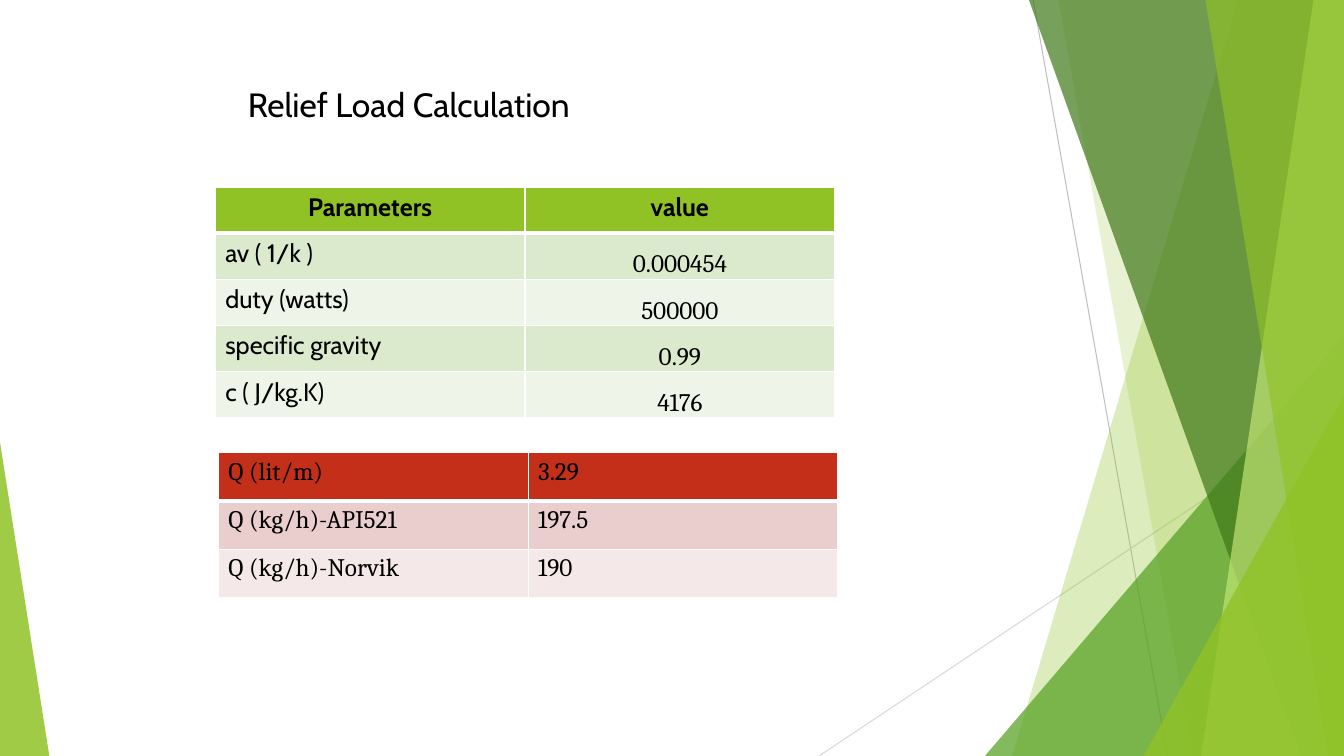
from lxml.etree import SubElement as Sub
from pptx import Presentation
from pptx.dml.color import RGBColor as RGB
from pptx.enum.shapes import MSO_CONNECTOR as Conn, MSO_SHAPE as Kind
from pptx.enum.text import MSO_ANCHOR as Anchor, PP_ALIGN as Align
from pptx.oxml.ns import qn
from pptx.util import Pt

PX = 9525
WIDE, HIGH = 1280, 720
BLACK = RGB(0x00, 0x00, 0x00)
WHITE = RGB(0xFF, 0xFF, 0xFF)
SILVER = RGB(0xBF, 0xBF, 0xBF)
PALE = RGB(0xD9, 0xD9, 0xD9)
LIME = RGB(0x90, 0xC2, 0x26)
LEAF = RGB(0x54, 0xA0, 0x21)
FOREST = RGB(0x3F, 0x78, 0x19)
SPRING = RGB(0xC0, 0xE4, 0x74)
GREENS = LIME, RGB(0xDB, 0xE9, 0xCD), RGB(0xEE, 0xF4, 0xE8)
REDS = RGB(0xC4, 0x2F, 0x1A), RGB(0xEA, 0xCD, 0xCD), RGB(0xF5, 0xE8, 0xE8)
SANS, SERIF = "Cabin", "Cambria"


class Page:
    def __init__(self, deck):
        self.shapes = deck.slides.add_slide(deck.slide_layouts[6]).shapes

    def line(self, start, end, color):
        points = [n * PX for n in (*start, *end)]
        line = self.shapes.add_connector(Conn.STRAIGHT, *points)
        line.line.color.rgb = color
        line.line.width = Pt(0.75)
        Sub(line._element.spPr, qn("a:effectLst"))

    def paint(self, shape, color, alpha):
        shape.shadow.inherit = False
        shape.fill.solid()
        shape.fill.fore_color.rgb = color
        tint = shape._element.spPr.find(qn("a:solidFill"))[0]
        Sub(tint, qn("a:alpha"), val=str(alpha * 1000))
        shape.line.fill.background()

    def band(self, top, base, color, alpha):
        pen = self.shapes.build_freeform(top, 0, PX)
        pen.add_line_segments([(WIDE, 0), (WIDE, HIGH), (base, HIGH)])
        self.paint(pen.convert_to_shape(), color, alpha)

    def wedge(self, left, top, width, peak, color, alpha):
        box = [n * PX for n in (left, top, width, HIGH - top)]
        shape = self.shapes.add_shape(Kind.ISOSCELES_TRIANGLE, *box)
        shape.adjustments[0] = peak
        self.paint(shape, color, alpha)

    def label(self, frame, text, font, size, bold=False, align=Align.LEFT):
        para = frame.paragraphs[0]
        para.alignment = align
        run = para.add_run()
        run.text = text
        run.font.name = font
        run.font.size = Pt(size)
        run.font.bold = bold
        run.font.color.rgb = BLACK

    def title(self, left, top, width, height, text):
        box = [n * PX for n in (left, top, width, height)]
        frame = self.shapes.add_textbox(*box).text_frame
        frame.word_wrap = True
        frame.vertical_anchor = Anchor.MIDDLE
        frame.margin_left = frame.margin_right = 0
        frame.margin_top = frame.margin_bottom = 0
        self.label(frame, text, SANS, 24)

    def edges(self, cell, row):
        props = cell._tc.get_or_add_tcPr()
        widths = {"L": 1, "R": 1, "T": 3 if row == 1 else 1,
                  "B": 3 if row == 0 else 1}
        for side, width in widths.items():
            edge = Sub(props, qn(f"a:ln{side}"), w=str(Pt(width)))
            fill = Sub(edge, qn("a:solidFill"))
            Sub(fill, qn("a:srgbClr"), val=str(WHITE))

    def grid(self, left, top, col, row, data, fills, style):
        size = len(data), len(data[0])
        box = [n * PX for n in (left, top, col * size[1], row * size[0])]
        table = self.shapes.add_table(*size, *box).table
        for r, texts in enumerate(data):
            table.rows[r].height = row * PX
            for c, text in enumerate(texts):
                cell = table.cell(r, c)
                self.edges(cell, r)
                cell.fill.solid()
                cell.fill.fore_color.rgb = fills[2 - r % 2 if r else 0]
                style(cell, r, c, text)

    def params(self, cell, row, col, text):
        value = row > 0 and col == 1
        if value:
            cell.vertical_anchor = Anchor.BOTTOM
            cell.margin_left = cell.margin_right = cell.margin_top = PX
            cell.margin_bottom = 0
        align = Align.CENTER if row == 0 or value else Align.LEFT
        font = SERIF if value else SANS
        self.label(cell.text_frame, text, font, 18, row == 0, align)

    def flows(self, cell, row, col, text):
        self.label(cell.text_frame, text, SERIF, 18)


def main():
    deck = Presentation()
    deck.slide_width, deck.slide_height = WIDE * PX, HIGH * PX
    page = Page(deck)
    page.line((984, 0), (1112, HIGH), SILVER)
    page.line((WIDE, 387), (780, HIGH), PALE)
    page.band(1179, 964, LIME, 30)
    page.band(1008, 1136, LIME, 20)
    page.wedge(938, 320, 342, 1, LEAF, 72)
    page.band(980, 1239, FOREST, 70)
    page.band(1251, 1144, SPRING, 70)
    page.band(1148, 1265, LIME, 65)
    page.wedge(1089, 377, 191, 1, LIME, 80)
    page.wedge(0, 421, 47, 0, LIME, 85)
    page.title(236, 79, 400, 40, "Relief Load Calculation")
    page.grid(205, 178, 295, 44, [
        ("Parameters", "value"),
        ("av ( 1/k )", "0.000454"),
        ("duty (watts)", "500000"),
        ("specific gravity", "0.99"),
        ("c ( J/kg.K)", "4176"),
    ], GREENS, page.params)
    page.grid(208, 431, 295, 46, [
        ("Q (lit/m)", "3.29"),
        ("Q (kg/h)-API521", "197.5"),
        ("Q (kg/h)-Norvik", "190"),
    ], REDS, page.flows)
    deck.save("out.pptx")


if __name__ == "__main__":
    main()
